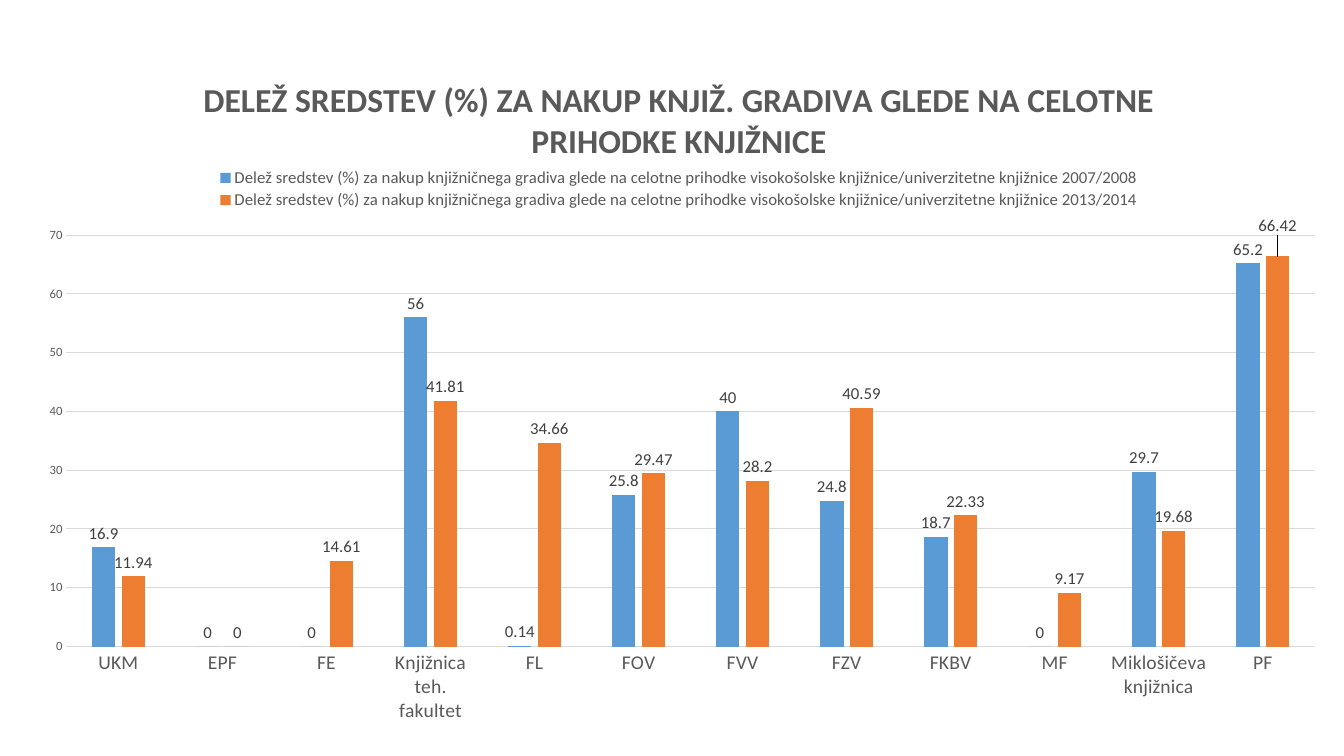
"""Build a slide with a column chart of library acquisition spending shares."""
from dataclasses import dataclass
from typing import Optional

from lxml import etree
from pptx import Presentation
from pptx.chart.data import CategoryChartData
from pptx.dml.color import RGBColor
from pptx.enum import chart as ch
from pptx.oxml import ns
from pptx.util import Cm, Pt


@dataclass(frozen=True)
class Theme:
    font: str = "Calibri"
    text: str = "595959"
    label: str = "404040"
    rule: str = "D9D9D9"
    title_size: int = 24
    category_size: int = 14
    body_size: int = 12
    scale_size: int = 9
    rule_width: float = 0.75


@dataclass(frozen=True)
class Period:
    years: str
    shares: tuple[float, ...]
    color: str


@dataclass(frozen=True)
class Layout:
    x: float
    y: float
    w: Optional[float] = None
    h: Optional[float] = None
    inner: bool = False


THEME = Theme()
HEADING = "DELEŽ SREDSTEV (%) ZA NAKUP KNJIŽ. GRADIVA GLEDE NA CELOTNE PRIHODKE KNJIŽNICE"
MEASURE = ("Delež sredstev (%) za nakup knjižničnega gradiva glede na celotne prihodke "
           "visokošolske knjižnice/univerzitetne knjižnice")
LIBRARIES = ("UKM", "EPF", "FE", "Knjižnica teh. fakultet", "FL", "FOV", "FVV", "FZV",
             "FKBV", "MF", "Miklošičeva knjižnica", "PF")
PERIODS = (
    Period("2007/2008", (16.9, 0, 0, 56, 0.14, 25.8, 40, 24.8, 18.7, 0, 29.7, 65.2), "5B9BD5"),
    Period("2013/2014", (11.94, 0, 14.61, 41.81, 34.66, 29.47, 28.2, 40.59, 22.33, 9.17,
                         19.68, 66.42), "ED7D31"),
)


def style_font(font, size: float, color: str, bold: bool = False) -> None:
    font.name = THEME.font
    font.size = Pt(size)
    font.bold = bold
    font.color.rgb = RGBColor.from_string(color)


def style_rule(line) -> None:
    line.color.rgb = RGBColor.from_string(THEME.rule)
    line.width = Pt(THEME.rule_width)


def place(parent, index: int, layout: Layout) -> None:
    for old in parent.findall(ns.qn("c:layout")):
        parent.remove(old)
    holder = etree.Element(ns.qn("c:layout"))
    manual = etree.SubElement(holder, ns.qn("c:manualLayout"))
    settings = [("layoutTarget", "inner")] if layout.inner else []
    if layout.w is not None:
        settings += [("xMode", "edge"), ("yMode", "edge")]
    settings += [(key, getattr(layout, key)) for key in "xywh"]
    for tag, value in settings:
        if value is not None:
            etree.SubElement(manual, ns.qn(f"c:{tag}")).set("val", str(value))
    parent.insert(index, holder)


def style_title(chart) -> None:
    chart.has_title = True
    heading = chart.chart_title.text_frame.paragraphs[0]
    heading.text = HEADING
    style_font(heading.runs[0].font, THEME.title_size, THEME.text, bold=True)
    chart.chart_title.include_in_layout = False


def style_axes(chart) -> None:
    libraries, scale = chart.category_axis, chart.value_axis
    for axis, size in ((libraries, THEME.category_size), (scale, THEME.scale_size)):
        axis.major_tick_mark = axis.minor_tick_mark = ch.XL_TICK_MARK.NONE
        style_font(axis.tick_labels.font, size, THEME.text)
    style_rule(libraries.format.line)
    scale.format.line.fill.background()
    scale.minimum_scale, scale.maximum_scale, scale.major_unit = 0, 70, 10
    style_rule(scale.major_gridlines.format.line)


def style_legend(chart) -> None:
    chart.has_legend = True
    legend = chart.legend
    legend.position = ch.XL_LEGEND_POSITION.BOTTOM
    legend.include_in_layout = False
    style_font(legend.font, THEME.body_size, THEME.text)
    place(legend._element, 1, Layout(0.14, 0.17, 0.72, 0.07))


def style_columns(chart) -> None:
    columns = chart.plots[0]
    columns.gap_width, columns.overlap = 219, -27
    columns.vary_by_categories = False
    for series, period in zip(columns.series, PERIODS):
        series.format.fill.solid()
        series.format.fill.fore_color.rgb = RGBColor.from_string(period.color)
        series.invert_if_negative = False
        labels = series.data_labels
        labels.show_value = True
        labels.position = ch.XL_LABEL_POSITION.OUTSIDE_END
        style_font(labels.font, THEME.body_size, THEME.label)


def raise_last_label(chart) -> None:
    series = chart.plots[0].series[-1]
    label = series.points[len(LIBRARIES) - 1].data_label
    style_font(label.font, THEME.body_size, THEME.label)
    label.position = ch.XL_LABEL_POSITION.OUTSIDE_END
    place(series.data_labels._element.find(ns.qn("c:dLbl")), 1, Layout(0, -0.025))


def add_share_chart(slide) -> None:
    shares = CategoryChartData()
    shares.categories = LIBRARIES
    for period in PERIODS:
        shares.add_series(f"{MEASURE} {period.years}", period.shares)
    chart = slide.shapes.add_chart(ch.XL_CHART_TYPE.COLUMN_CLUSTERED, Cm(0.69), Cm(1.32),
                                   Cm(32.84), Cm(16.89), shares).chart
    style_font(chart.font, THEME.body_size, THEME.text)
    style_title(chart)
    style_axes(chart)
    style_legend(chart)
    style_columns(chart)
    raise_last_label(chart)
    plot_area = chart._chartSpace.find(".//" + ns.qn("c:plotArea"))
    place(plot_area, 0, Layout(0.03, 0.274, 0.958, 0.617, inner=True))


def main() -> None:
    deck = Presentation()
    deck.slide_width, deck.slide_height = Cm(33.87), Cm(19.05)
    add_share_chart(deck.slides.add_slide(deck.slide_layouts[6]))
    deck.save("out.pptx")


if __name__ == "__main__":
    main()
